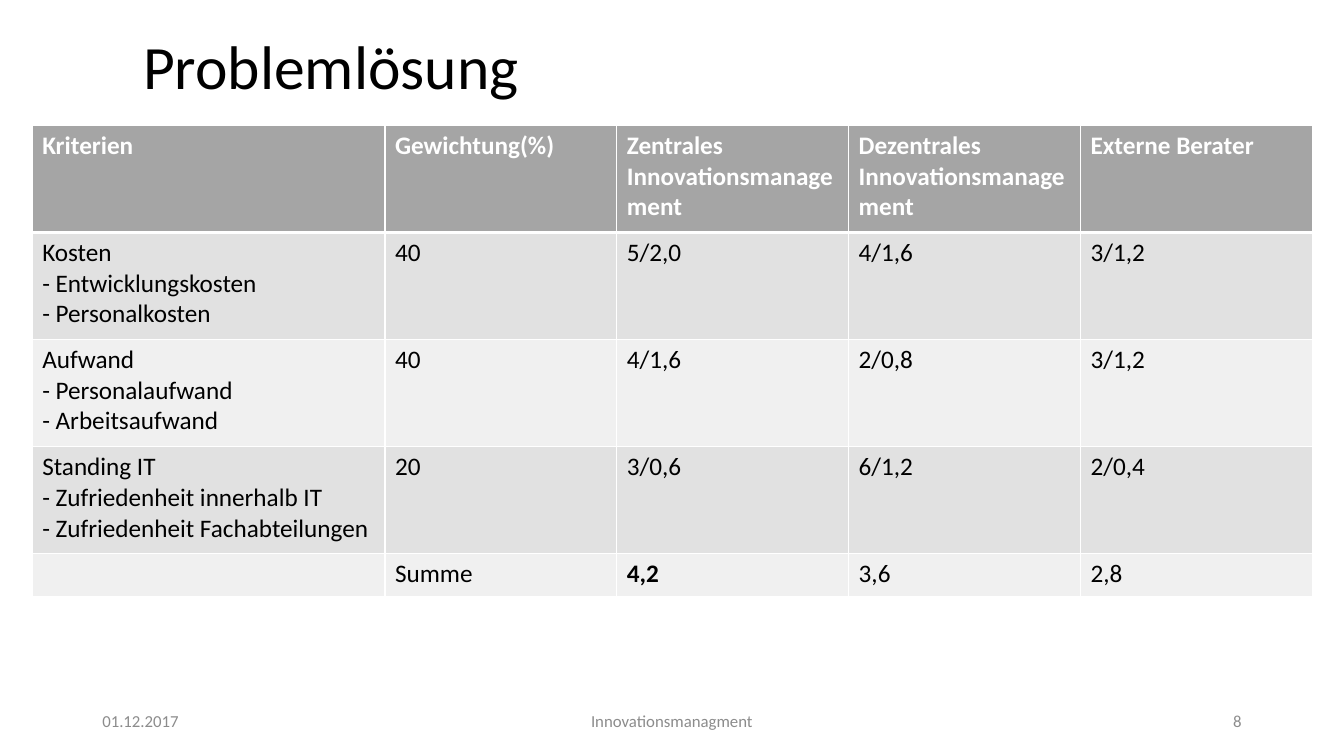
from lxml.etree import SubElement
from pptx import Presentation
from pptx.dml.color import RGBColor
from pptx.enum.text import MSO_ANCHOR, PP_ALIGN
from pptx.oxml.ns import qn
from pptx.util import Pt

FONT = "Calibri"
COLORS = {
    "text": "000000",
    "white": "FFFFFF",
    "head": "A5A5A5",
    "dark": "E1E1E1",
    "light": "F0F0F0",
    "foot": "8C8C8C",
}
WIDTHS = [252] + [165.6] * 4
HEIGHTS = [76.5] * 4 + [31]
ROWS = [
    ["Kriterien", "Gewichtung(%)", "Zentrales\nInnovationsmanagement",
     "Dezentrales Innovationsmanagement", "Externe Berater"],
    ["Kosten\n- Entwicklungskosten\n- Personalkosten",
     "40", "5/2,0", "4/1,6", "3/1,2"],
    ["Aufwand\n- Personalaufwand\n- Arbeitsaufwand",
     "40", "4/1,6", "2/0,8", "3/1,2"],
    ["Standing IT\n- Zufriedenheit innerhalb IT\n- Zufriedenheit Fachabteilungen",
     "20", "3/0,6", "6/1,2", "2/0,4"],
    ["", "Summe", "4,2", "3,6", "2,8"],
]
BEST = "4,2"


def color(name):
    return RGBColor.from_string(COLORS[name])


def write(frame, text, size, tone, bold=False, align=PP_ALIGN.LEFT):
    """Fill the first paragraph, one run for each line of text."""
    para = frame.paragraphs[0]
    para.alignment = align
    para.font.size = Pt(size)
    for num, line in enumerate(text.split("\n")):
        if num:
            para.add_line_break()
        if line:
            run = para.add_run()
            run.text = line
            run.font.name = FONT
            run.font.size = Pt(size)
            run.font.bold = bold
            run.font.color.rgb = color(tone)
    return para


def add_title(slide, text):
    title = slide.shapes.title
    title.left, title.top = Pt(0), Pt(22.5)
    title.width, title.height = Pt(473), Pt(104.4)
    title.text_frame.word_wrap = True
    title.text_frame.vertical_anchor = MSO_ANCHOR.TOP
    para = write(title.text_frame, text, 44, "text", align=PP_ALIGN.CENTER)
    para.line_spacing = 0.9


def add_foot(slide, left, width, text, align):
    box = slide.shapes.add_textbox(Pt(left), Pt(500.5), Pt(width), Pt(28.75))
    box.text_frame.word_wrap = True
    box.text_frame.vertical_anchor = MSO_ANCHOR.MIDDLE
    write(box.text_frame, text, 12, "foot", align=align)


def add_edges(cell, top, bottom):
    """Draw white cell borders; top and bottom are widths in points."""
    props = cell._tc.get_or_add_tcPr()
    for tag, width in (("lnL", 1), ("lnR", 1), ("lnT", top), ("lnB", bottom)):
        edge = SubElement(props, qn(f"a:{tag}"), w=str(Pt(width)))
        fill = SubElement(edge, qn("a:solidFill"))
        SubElement(fill, qn("a:srgbClr"), val=COLORS["white"])


def add_grid(slide):
    frame = slide.shapes.add_table(
        len(ROWS), len(WIDTHS), Pt(23), Pt(89.5),
        Pt(sum(WIDTHS)), Pt(sum(HEIGHTS)))
    table = frame.table
    for col, width in zip(table.columns, WIDTHS):
        col.width = Pt(width)
    for row, height in zip(table.rows, HEIGHTS):
        row.height = Pt(height)
    for r, texts in enumerate(ROWS):
        head = r == 0
        shade = "head" if head else "dark" if r % 2 else "light"
        for c, text in enumerate(texts):
            cell = table.cell(r, c)
            add_edges(cell, 3 if r == 1 else 1, 3 if head else 1)
            cell.fill.solid()
            cell.fill.fore_color.rgb = color(shade)
            write(cell.text_frame, text, 18, "white" if head else "text",
                  bold=head or text == BEST)


def main():
    deck = Presentation()
    deck.slide_width, deck.slide_height = Pt(960), Pt(540)
    slide = deck.slides.add_slide(deck.slide_layouts[5])
    add_title(slide, "Problemlösung")
    add_grid(slide)
    add_foot(slide, 66, 216, "01.12.2017", PP_ALIGN.LEFT)
    add_foot(slide, 318, 324, "Innovationsmanagment", PP_ALIGN.CENTER)
    add_foot(slide, 678, 216, "8", PP_ALIGN.RIGHT)
    deck.save("out.pptx")


if __name__ == "__main__":
    main()
